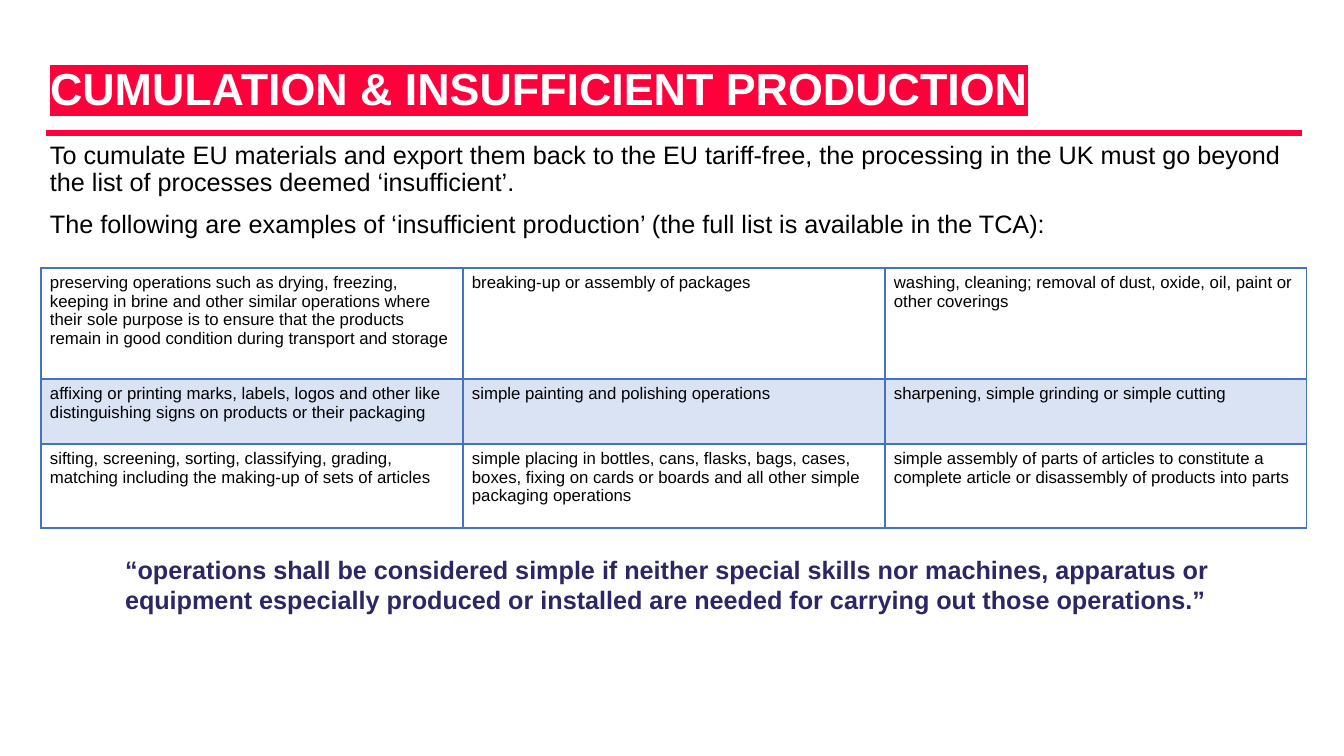
"""Build the slide on cumulation and insufficient production."""
from lxml import etree
from pptx import Presentation
from pptx.dml.color import RGBColor
from pptx.enum.shapes import MSO_CONNECTOR
from pptx.enum.text import MSO_ANCHOR, MSO_AUTO_SIZE, PP_ALIGN
from pptx.oxml.ns import qn
from pptx.util import Emu, Pt

STRAIGHT = MSO_CONNECTOR.STRAIGHT
TOP, BOTTOM = MSO_ANCHOR.TOP, MSO_ANCHOR.BOTTOM
LEFT = PP_ALIGN.LEFT
NO_AUTOFIT = MSO_AUTO_SIZE.NONE

TITLE = "CUMULATION & INSUFFICIENT PRODUCTION"
INTRODUCTION = [
    "To cumulate EU materials and export them back to the EU tariff-free, the processing in the UK must go beyond the list of processes deemed ‘insufficient’.",
    "The following are examples of ‘insufficient production’ (the full list is available in the TCA):",
]
OPERATIONS = [
    [
        "preserving operations such as drying, freezing, keeping in brine and other similar operations where their sole purpose is to ensure that the products remain in good condition during transport and storage",
        "breaking-up or assembly of packages",
        "washing, cleaning; removal of dust, oxide, oil, paint or other coverings",
    ],
    [
        "affixing or printing marks, labels, logos and other like distinguishing signs on products or their packaging",
        "simple painting and polishing operations",
        "sharpening, simple grinding or simple cutting",
    ],
    [
        "sifting, screening, sorting, classifying, grading, matching including the making-up of sets of articles",
        "simple placing in bottles, cans, flasks, bags, cases, boxes, fixing on cards or boards and all other simple packaging operations",
        "simple assembly of parts of articles to constitute a complete article or disassembly of products into parts",
    ],
]
QUOTE = "“operations shall be considered simple if neither special skills nor machines, apparatus or equipment especially produced or installed are needed for carrying out those operations.”"

COLOURS = {
    "red": "FF003B",
    "white": "FFFFFF",
    "black": "000000",
    "navy": "2C2664",
    "border": "4472C4",
    "band": "DAE3F3",
}
FORMATS = {
    "title": {"size": Pt(32), "bold": True, "colour": "white"},
    "introduction": {"size": Pt(18), "bold": False, "colour": "black"},
    "cell": {"size": Pt(12), "bold": False, "colour": "black"},
    "quote": {"size": Pt(18), "bold": True, "colour": "navy"},
}
INSETS = {"margin_left": 9, "margin_top": 5, "margin_right": 9, "margin_bottom": 5}
SLIDE_SIZE = (1344, 756)
TITLE_BOX = (41, 55, 1257, 65)
RULE = (46, 133, 1302, 133)
INTRODUCTION_BOX = (41, 138, 1265, 110)
QUOTE_BOX = (116, 549, 1152, 72)
TABLE_CORNER = (41, 268)
COLUMN_WIDTH = 422
ROW_HEIGHTS = [111, 65, 84]


def px(length):
    return Emu(round(length * 914400 / 100.8))


def rgb(name):
    return RGBColor.from_string(COLOURS[name])


def style_font(font, style):
    font.name = "Arial"
    for attribute, value in FORMATS[style].items():
        if attribute == "colour":
            font.color.rgb = rgb(value)
        else:
            setattr(font, attribute, value)


def fill_text(frame, lines, style, anchor=TOP, spacing=1.0):
    frame.word_wrap = True
    frame.auto_size = NO_AUTOFIT
    frame.vertical_anchor = anchor
    for side, inset in INSETS.items():
        setattr(frame, side, px(inset))
    for index, line in enumerate(lines):
        paragraph = frame.add_paragraph() if index else frame.paragraphs[0]
        paragraph.alignment = LEFT
        paragraph.line_spacing = spacing
        paragraph.space_before = Pt(10 if index else 0)
        run = paragraph.add_run()
        run.text = line
        style_font(run.font, style)


def highlight(run, colour):
    mark = etree.Element(qn("a:highlight"))
    etree.SubElement(mark, qn("a:srgbClr"), val=COLOURS[colour])
    run.font._element.find(qn("a:solidFill")).addnext(mark)


def add_title(slide):
    title = slide.shapes.title
    title.left, title.top, title.width, title.height = map(px, TITLE_BOX)
    fill_text(title.text_frame, [TITLE], "title", BOTTOM)
    highlight(title.text_frame.paragraphs[0].runs[0], "red")


def add_rule(slide):
    rule = slide.shapes.add_connector(STRAIGHT, *map(px, RULE))
    rule.line.color.rgb = rgb("red")
    rule.line.width = Pt(4.5)
    etree.SubElement(rule._element.spPr, qn("a:effectLst"))


def add_text(slide, box, lines, style, spacing=1.0):
    shape = slide.shapes.add_textbox(*map(px, box))
    fill_text(shape.text_frame, lines, style, spacing=spacing)


def add_borders(cell, widths):
    properties = cell._tc.get_or_add_tcPr()
    for side, width in widths.items():
        border = etree.SubElement(properties, qn(f"a:ln{side}"), w=str(Pt(width)))
        fill = etree.SubElement(border, qn("a:solidFill"))
        etree.SubElement(fill, qn("a:srgbClr"), val=COLOURS["border"])


def add_operations(slide):
    columns = len(OPERATIONS[0])
    size = (COLUMN_WIDTH * columns, sum(ROW_HEIGHTS))
    table = slide.shapes.add_table(
        len(OPERATIONS), columns, *map(px, TABLE_CORNER + size)
    ).table
    table.first_row = False
    table.horz_banding = False
    for column in table.columns:
        column.width = px(COLUMN_WIDTH)
    for row_index, texts in enumerate(OPERATIONS):
        table.rows[row_index].height = px(ROW_HEIGHTS[row_index])
        widths = {
            "L": 1,
            "R": 1,
            "T": 2 if row_index == 1 else 1,
            "B": 2 if row_index == 0 else 1,
        }
        for column_index, text in enumerate(texts):
            cell = table.cell(row_index, column_index)
            add_borders(cell, widths)
            cell.fill.solid()
            cell.fill.fore_color.rgb = rgb("band" if row_index % 2 else "white")
            for side, inset in INSETS.items():
                setattr(cell, side, px(inset))
            paragraph = cell.text_frame.paragraphs[0]
            run = paragraph.add_run()
            run.text = text
            style_font(run.font, "cell")


def main():
    presentation = Presentation()
    presentation.slide_width, presentation.slide_height = map(px, SLIDE_SIZE)
    slide = presentation.slides.add_slide(presentation.slide_layouts[5])
    add_rule(slide)
    add_text(slide, INTRODUCTION_BOX, INTRODUCTION, "introduction", 0.9)
    add_title(slide)
    add_operations(slide)
    add_text(slide, QUOTE_BOX, [QUOTE], "quote")
    presentation.save("out.pptx")


if __name__ == "__main__":
    main()
